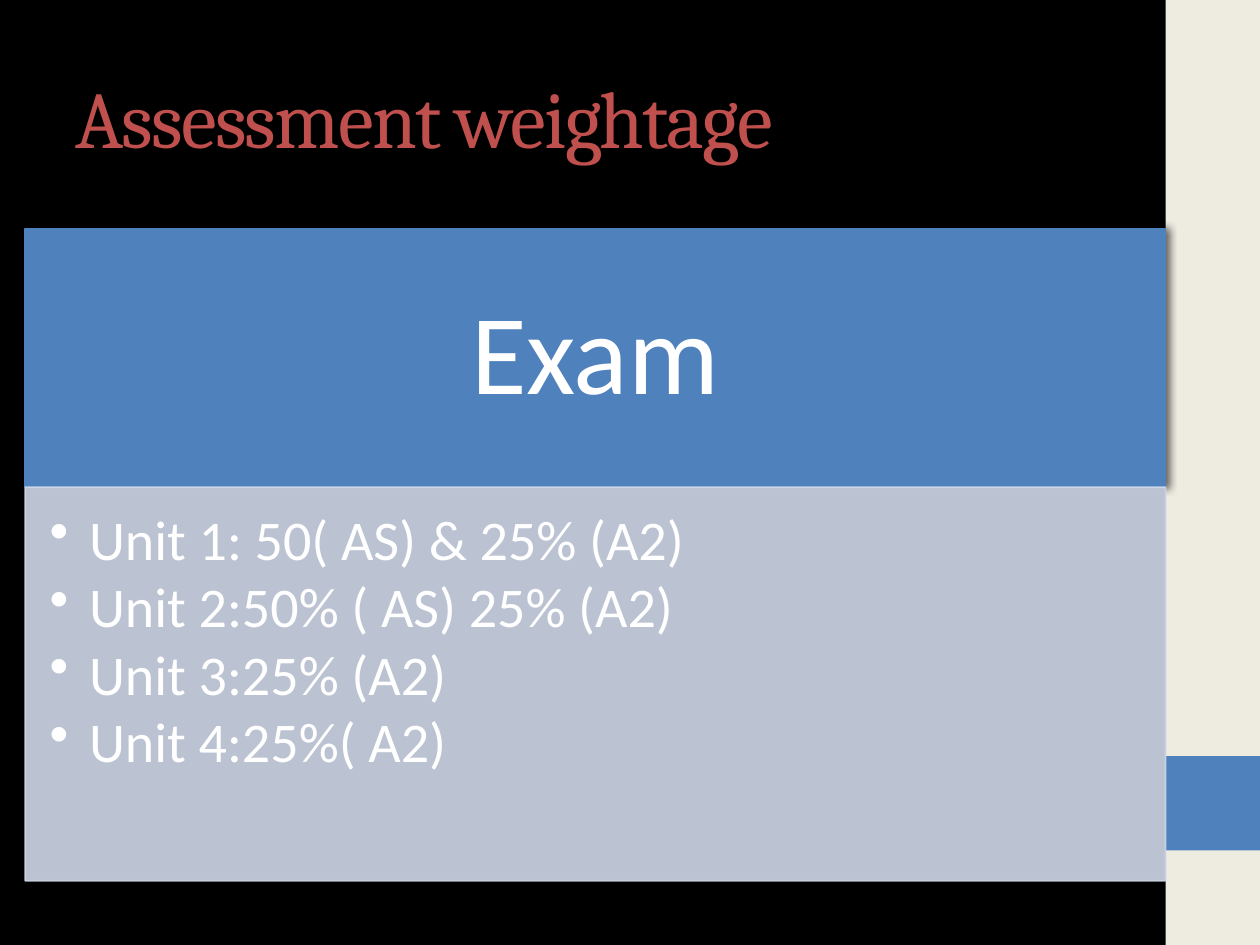
from lxml import etree
from pptx import Presentation
from pptx.dml.color import RGBColor
from pptx.enum.shapes import MSO_SHAPE
from pptx.enum.text import MSO_ANCHOR, PP_ALIGN
from pptx.oxml.ns import qn
from pptx.util import Pt

RECT = MSO_SHAPE.RECTANGLE
TOP, MIDDLE = MSO_ANCHOR.TOP, MSO_ANCHOR.MIDDLE
LEFT, CENTER, JUSTIFY = PP_ALIGN.LEFT, PP_ALIGN.CENTER, PP_ALIGN.JUSTIFY

# Content
TITLE = "Assessment weightage"
HEADING = "Exam"
UNITS = [
    "Unit 1: 50( AS) & 25% (A2)",
    "Unit 2:50% ( AS) 25% (A2)",
    "Unit 3:25% (A2)",
    "Unit 4:25%( A2)",
]
BLACK, WHITE, CREAM = "000000", "FFFFFF", "EEECE1"
BLUE, PALE_BLUE, RED = "4F81BD", "D0D8E8", "C0504D"

# Layout, in points
SLIDE_W, SLIDE_H = 720, 540
BAND_W = 54
BAND_X = SLIDE_W - BAND_W
ACCENT_Y = 432
PANEL_X, HEADING_Y, UNITS_Y, UNITS_END = 14.4, 130.7, 278.4, 503.3
BULLET_INDENT = 22.5


def rgb(value):
    return RGBColor.from_string(value)


def add_element(parent, tag, **attributes):
    return etree.SubElement(parent, qn(tag), attributes)


def add_box(x, y, width, height, fill, line=None):
    box = slide.shapes.add_shape(RECT, Pt(x), Pt(y), Pt(width), Pt(height))
    box.shadow.inherit = False
    box.fill.solid()
    box.fill.fore_color.rgb = rgb(fill)
    if line:
        box.line.color.rgb = rgb(line)
        box.line.width = Pt(1)
    else:
        box.line.fill.background()
    return box


def write(box, lines, font, size, color, align, anchor, insets, spacing=1.0, after=0):
    frame = box.text_frame
    frame.word_wrap = True
    frame.vertical_anchor = anchor
    (frame.margin_left, frame.margin_top,
     frame.margin_right, frame.margin_bottom) = map(Pt, insets)
    frame.text = "\n".join(lines)
    for paragraph in frame.paragraphs:
        paragraph.alignment = align
        paragraph.line_spacing = spacing
        paragraph.space_after = Pt(after)
        paragraph.font.name = font
        paragraph.font.size = Pt(size)
        paragraph.font.color.rgb = rgb(color)
    return frame


deck = Presentation()
deck.slide_width, deck.slide_height = Pt(SLIDE_W), Pt(SLIDE_H)
slide = deck.slides.add_slide(deck.slide_layouts[6])
slide.background.fill.solid()
slide.background.fill.fore_color.rgb = rgb(BLACK)

# Side band with its accent square
add_box(BAND_X, 0, BAND_W, SLIDE_H, CREAM)
add_box(BAND_X, ACCENT_Y, BAND_W, BAND_W, BLUE)

# Title, with slightly tightened letters
title = slide.shapes.add_textbox(Pt(36), Pt(21.6), Pt(600), Pt(90))
title_text = write(title, [TITLE], "Cambria", 46, RED, LEFT, MIDDLE, (7.2, 3.6, 7.2, 3.6))
title_text.paragraphs[0].runs[0].font._element.set("spc", "-100")

# Heading panel, with a soft shadow to the right
panel_w = BAND_X - PANEL_X
heading = add_box(PANEL_X, HEADING_Y, panel_w, UNITS_Y - HEADING_Y, BLUE, BLUE)
write(heading, [HEADING], "Calibri", 65, WHITE, CENTER, MIDDLE, (37, 21, 37, 21), 0.9)
effects = heading._element.spPr.find(qn("a:effectLst"))
shadow = add_element(effects, "a:outerShdw", blurRad=str(Pt(4)), dist=str(Pt(2)),
                     dir="0", rotWithShape="0")
shadow_color = add_element(shadow, "a:srgbClr", val=BLACK)
add_element(shadow_color, "a:alpha", val="60000")

# Units panel, 90% opaque, with a bulleted list
units = add_box(PANEL_X, UNITS_Y, panel_w, UNITS_END - UNITS_Y, PALE_BLUE, PALE_BLUE)
for panel_color in units._element.spPr.iter(qn("a:srgbClr")):
    add_element(panel_color, "a:alpha", val="90000")
units_text = write(units, UNITS, "Calibri", 32, WHITE, JUSTIFY, TOP,
                   (14, 14, 18, 20), 0.9, 4)
for unit in units_text.paragraphs:
    properties = unit._p.get_or_add_pPr()
    properties.set("marL", str(Pt(BULLET_INDENT)))
    properties.set("indent", str(Pt(-BULLET_INDENT)))
    bullet = etree.Element(qn("a:buChar"), char="•")
    properties.find(qn("a:defRPr")).addprevious(bullet)

deck.save("out.pptx")
